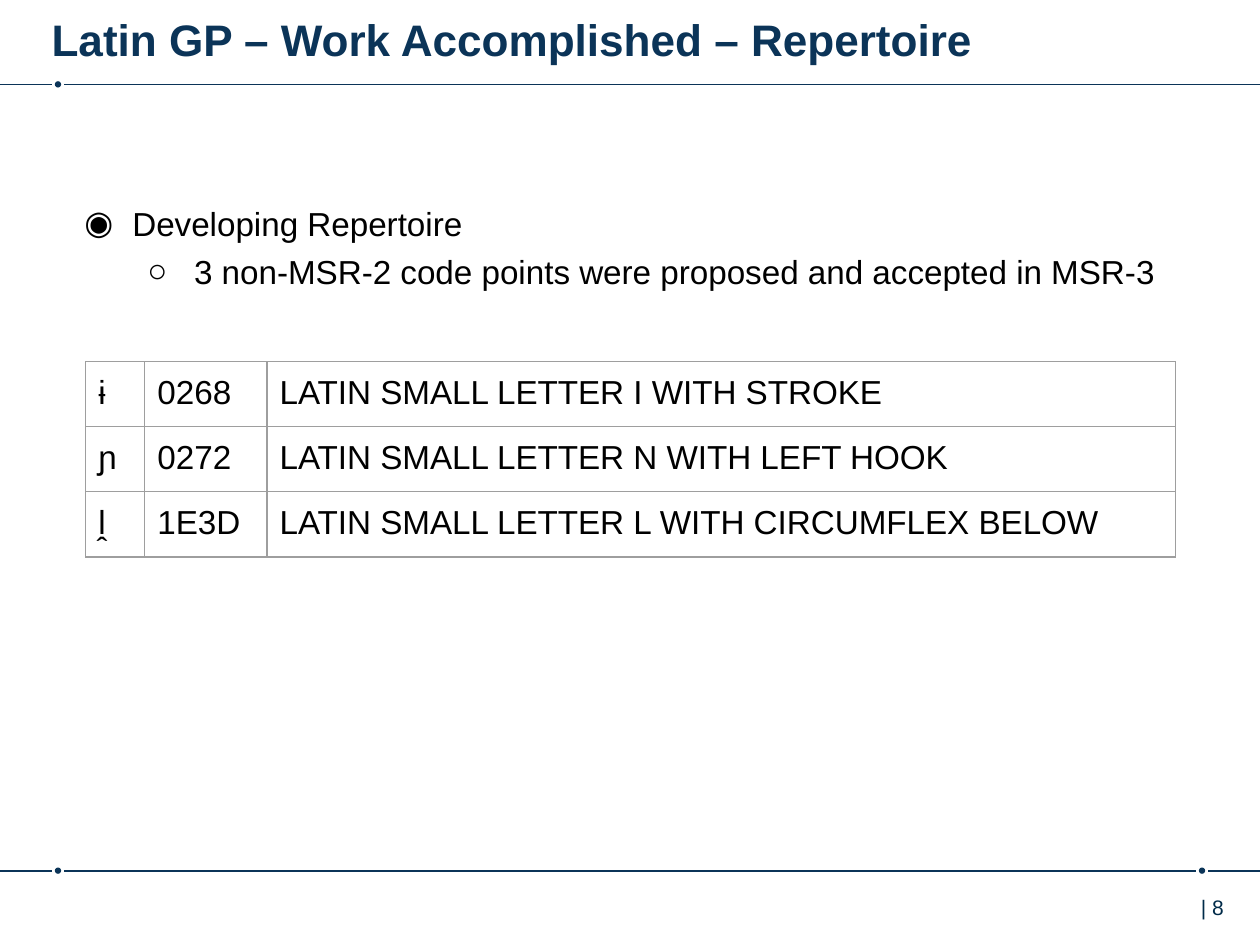
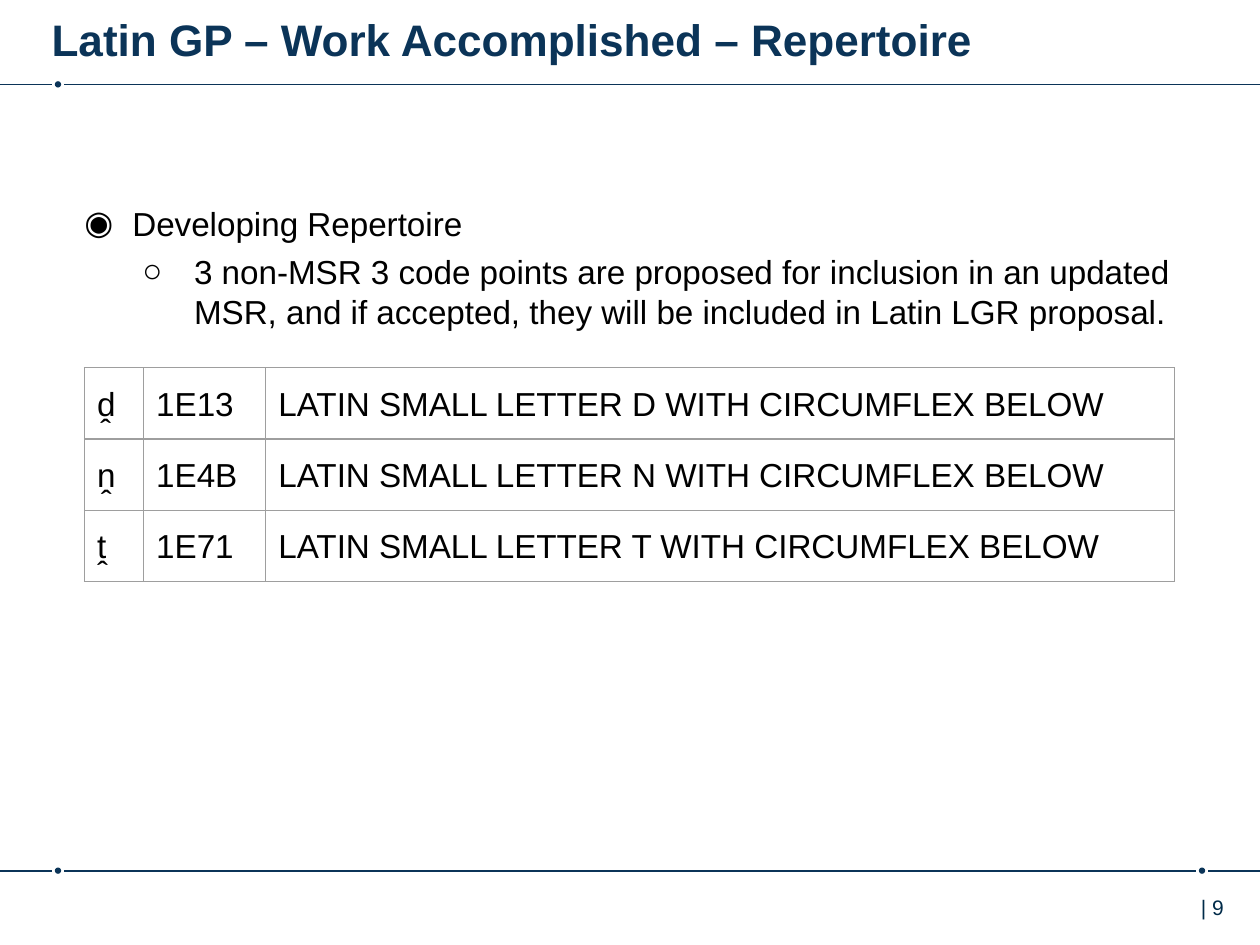
from dataclasses import dataclass

from lxml import etree
from pptx import Presentation
from pptx.dml.color import RGBColor
from pptx.enum.shapes import MSO_CONNECTOR, MSO_SHAPE
from pptx.oxml.ns import qn
from pptx.slide import Slide
from pptx.table import _Cell
from pptx.text.text import TextFrame, _Paragraph
from pptx.util import Inches, Pt

STRAIGHT = MSO_CONNECTOR.STRAIGHT
OVAL = MSO_SHAPE.OVAL


@dataclass(frozen=True)
class Theme:
    font: str = "Arial"
    navy: str = "0B3458"
    page_number: str = "002B49"
    text: str = "000000"
    border: str = "9E9E9E"
    title_size: float = 25.2
    body_size: float = 19
    number_size: float = 12
    rule_width: float = 1
    border_width: float = 0.75


@dataclass(frozen=True)
class Rule:
    """A horizontal line, interrupted around each dot."""
    y: float
    dots: tuple[float, ...]


@dataclass(frozen=True)
class Bullet:
    symbol: str
    text: str
    margin: float
    hanging: float
    space_before: float = 0


@dataclass(frozen=True)
class CodePointTable:
    left: float
    top: float
    row_height: float
    line_spacing: float
    rows: tuple[tuple[str, str, str], ...]


@dataclass(frozen=True)
class RepertoirePage:
    number: int
    body_height: float
    finding: str
    finding_hanging: float
    table: CodePointTable


THEME = Theme()
PAGE_WIDTH, PAGE_HEIGHT = 10, 7.5
TITLE = "Latin GP – Work Accomplished – Repertoire"
RULES = (Rule(0.67, (0.46,)), Rule(6.91, (0.46, 9.54)))
DOT_SIZE, DOT_GAP = 0.05, 0.05
COLUMN_WIDTHS = (0.47, 0.97, 7.21)
CELL_MARGIN = 0.1

PAGES = (
    RepertoirePage(
        8, 1.17, "3 non-MSR-2 code points were proposed and accepted in MSR-3", 0.37,
        CodePointTable(0.68, 2.87, 0.49, 1.0, (
            ("ɨ", "0268", "LATIN SMALL LETTER I WITH STROKE"),
            ("ɲ", "0272", "LATIN SMALL LETTER N WITH LEFT HOOK"),
            ("ḽ", "1E3D", "LATIN SMALL LETTER L WITH CIRCUMFLEX BELOW"),
        )),
    ),
    RepertoirePage(
        9, 1.22,
        "3 non-MSR 3 code points are proposed for inclusion in an updated MSR, "
        "and if accepted, they will be included in Latin LGR proposal.", 0.41,
        CodePointTable(0.67, 2.92, 0.54, 1.15, (
            ("ḓ", "1E13", "LATIN SMALL LETTER D WITH CIRCUMFLEX BELOW"),
            ("ṋ", "1E4B", "LATIN SMALL LETTER N WITH CIRCUMFLEX BELOW"),
            ("ṱ", "1E71", "LATIN SMALL LETTER T WITH CIRCUMFLEX BELOW"),
        )),
    ),
)


# Text helpers
def style(para: _Paragraph, size: float, color: str, bold: bool = False) -> None:
    para.font.name = THEME.font
    para.font.size = Pt(size)
    para.font.bold = bold
    para.font.color.rgb = RGBColor.from_string(color)


def add_text_frame(page: Slide, left: float, top: float, width: float, height: float,
                   side_margin: float = 0, end_margin: float = 0) -> TextFrame:
    box = page.shapes.add_textbox(Inches(left), Inches(top), Inches(width), Inches(height))
    frame = box.text_frame
    frame.word_wrap = True
    frame.margin_left = frame.margin_right = Inches(side_margin)
    frame.margin_top = frame.margin_bottom = Inches(end_margin)
    return frame


def write_bullet(para: _Paragraph, bullet: Bullet) -> None:
    para.text = bullet.text
    properties = para._p.get_or_add_pPr()
    properties.set("marL", str(Inches(bullet.margin)))
    properties.set("indent", str(-Inches(bullet.hanging)))
    color = etree.SubElement(properties, qn("a:buClr"))
    etree.SubElement(color, qn("a:srgbClr"), val=THEME.text)
    etree.SubElement(properties, qn("a:buFont"), typeface=THEME.font)
    etree.SubElement(properties, qn("a:buChar"), char=bullet.symbol)
    if bullet.space_before:
        para.space_before = Pt(bullet.space_before)
    style(para, THEME.body_size, THEME.text)


# Shared frame: rules with dots, title, page number
def add_rule(page: Slide, rule: Rule) -> None:
    navy = RGBColor.from_string(THEME.navy)
    starts = [0, *(dot + DOT_GAP for dot in rule.dots)]
    ends = [*(dot - DOT_GAP for dot in rule.dots), PAGE_WIDTH]
    for start, end in zip(starts, ends):
        line = page.shapes.add_connector(
            STRAIGHT, Inches(start), Inches(rule.y), Inches(end), Inches(rule.y))
        line.line.color.rgb = navy
        line.line.width = Pt(THEME.rule_width)
        etree.SubElement(line._element.spPr, qn("a:effectLst"))
    for center in rule.dots:
        dot = page.shapes.add_shape(
            OVAL, Inches(center - DOT_SIZE / 2), Inches(rule.y - DOT_SIZE / 2),
            Inches(DOT_SIZE), Inches(DOT_SIZE))
        dot.shadow.inherit = False
        dot.fill.solid()
        dot.fill.fore_color.rgb = navy
        dot.line.fill.background()


def add_frame(page: Slide, number: int) -> None:
    for rule in RULES:
        add_rule(page, rule)

    number_frame = add_text_frame(page, 9.29, 7.05, 0.71, 0.4, 0.1, 0.05)
    number_frame.margin_left = Inches(0.24)
    number_para = number_frame.paragraphs[0]
    number_para.text = f"| {number}"
    style(number_para, THEME.number_size, THEME.page_number)

    title_para = add_text_frame(page, 0.41, 0.05, 8.76, 0.49, 0, 0.05).paragraphs[0]
    title_para.text = TITLE
    style(title_para, THEME.title_size, THEME.navy, bold=True)


# Page content
def add_bullets(page: Slide, content: RepertoirePage) -> None:
    frame = add_text_frame(page, 0.67, 1.61, 8.65, content.body_height)
    write_bullet(frame.paragraphs[0], Bullet("◉", "Developing Repertoire", 0.38, 0.38))
    write_bullet(frame.add_paragraph(),
                 Bullet("○", content.finding, 0.87, content.finding_hanging, 5))


def format_cell(cell: _Cell) -> None:
    cell.margin_left = cell.margin_right = Inches(CELL_MARGIN)
    cell.margin_top = cell.margin_bottom = Inches(CELL_MARGIN)
    properties = cell._tc.get_or_add_tcPr()
    for side in ("lnL", "lnR", "lnT", "lnB"):
        border = etree.SubElement(properties, qn(f"a:{side}"), w=str(Pt(THEME.border_width)))
        fill = etree.SubElement(border, qn("a:solidFill"))
        etree.SubElement(fill, qn("a:srgbClr"), val=THEME.border)
    cell.fill.background()


def add_code_points(page: Slide, content: CodePointTable) -> None:
    row_count = len(content.rows)
    table = page.shapes.add_table(
        row_count, len(COLUMN_WIDTHS), Inches(content.left), Inches(content.top),
        Inches(sum(COLUMN_WIDTHS)), Inches(content.row_height * row_count)).table
    table.first_row = table.horz_banding = False
    for column, width in zip(table.columns, COLUMN_WIDTHS):
        column.width = Inches(width)
    for row, values in zip(table.rows, content.rows):
        row.height = Inches(content.row_height)
        for cell, value in zip(row.cells, values):
            format_cell(cell)
            para = cell.text_frame.paragraphs[0]
            para.text = value
            para.line_spacing = content.line_spacing
            style(para, THEME.body_size, THEME.text)


def main() -> None:
    deck = Presentation()
    deck.slide_width, deck.slide_height = Inches(PAGE_WIDTH), Inches(PAGE_HEIGHT)
    blank = deck.slide_layouts[6]
    for content in PAGES:
        page = deck.slides.add_slide(blank)
        add_frame(page, content.number)
        add_bullets(page, content)
        add_code_points(page, content.table)
    deck.save("out.pptx")


if __name__ == "__main__":
    main()
